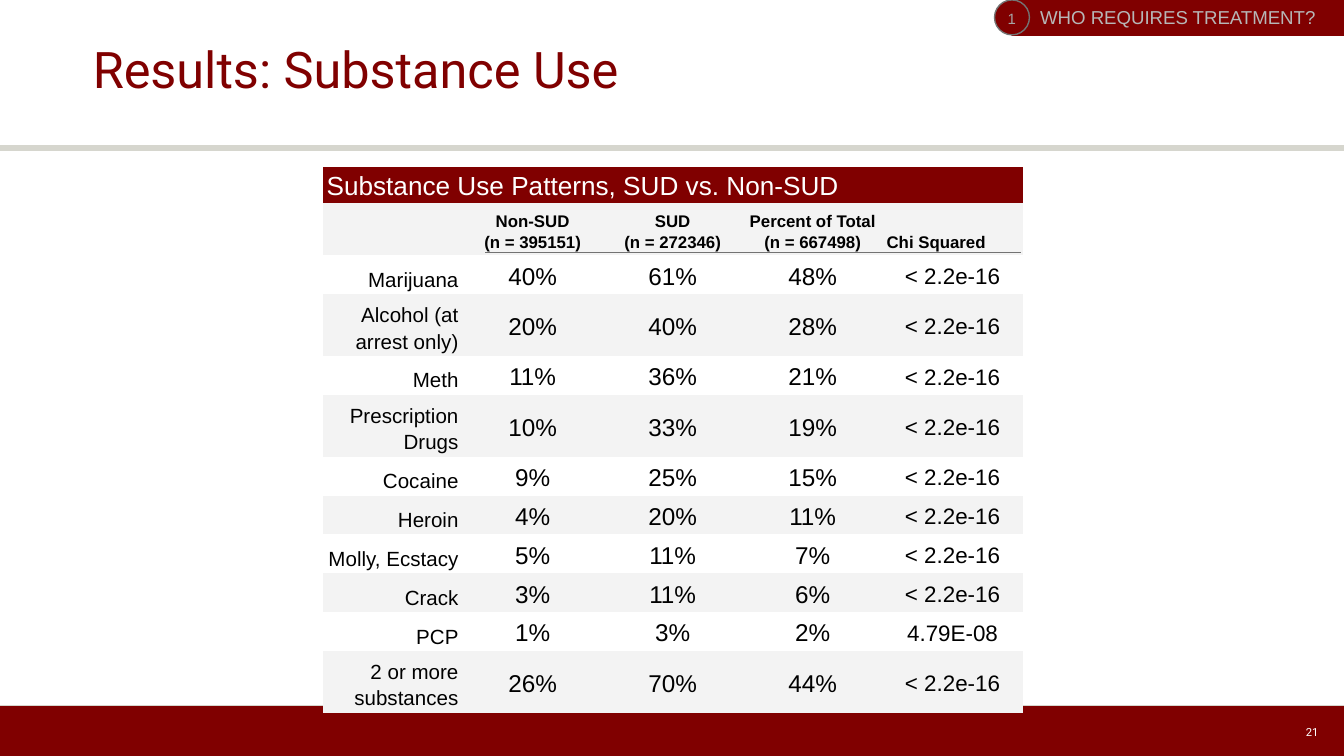
import pptx
import pptx.util
import pptx.dml.color
import pptx.enum.shapes
import pptx.enum.text
import pptx.oxml.ns
from lxml import etree

Inches = pptx.util.Inches
Pt = pptx.util.Pt
RGBColor = pptx.dml.color.RGBColor
Align = pptx.enum.text.PP_ALIGN
Anchor = pptx.enum.text.MSO_ANCHOR
Shape = pptx.enum.shapes.MSO_SHAPE

MAROON = RGBColor(0x80, 0x00, 0x00)
STONE = RGBColor(0xD6, 0xD6, 0xCE)
GRAY = RGBColor(0x73, 0x73, 0x73)
BAND = RGBColor(0xF3, 0xF3, 0xF3)
LABEL = RGBColor(0xB7, 0xB7, 0xB7)
NUMBER = RGBColor(0xA6, 0xA6, 0xA6)
WHITE = RGBColor(0xFF, 0xFF, 0xFF)
BLACK = RGBColor(0x00, 0x00, 0x00)

TITLE = "Results: Substance Use"
SECTION = ("1", "WHO REQUIRES TREATMENT?")
PAGE_NUMBER = "21"
TABLE_TITLE = "Substance Use Patterns, SUD vs. Non-SUD"
HEADERS = ["", "Non-SUD\n(n = 395151)", "SUD\n(n = 272346)",
           "Percent of Total\n(n = 667498)", "Chi Squared"]
ROWS = [
    ("Marijuana", "40%", "61%", "48%", "< 2.2e-16"),
    ("Alcohol (at arrest only)", "20%", "40%", "28%", "< 2.2e-16"),
    ("Meth", "11%", "36%", "21%", "< 2.2e-16"),
    ("Prescription Drugs", "10%", "33%", "19%", "< 2.2e-16"),
    ("Cocaine", "9%", "25%", "15%", "< 2.2e-16"),
    ("Heroin", "4%", "20%", "11%", "< 2.2e-16"),
    ("Molly, Ecstacy", "5%", "11%", "7%", "< 2.2e-16"),
    ("Crack", "3%", "11%", "6%", "< 2.2e-16"),
    ("PCP", "1%", "3%", "2%", "4.79E-08"),
    ("2 or more substances", "26%", "70%", "44%", "< 2.2e-16"),
]
SLIDE_WIDTH = 10
SLIDE_HEIGHT = SLIDE_WIDTH * 9 / 16
FOOTER_TOP = 5.25
TABLE_LEFT, TABLE_TOP, TABLE_WIDTH = 2.4, 1.24, 5.21
ROW_HEIGHT, HEADER_HEIGHT, TWO_LINE_HEIGHT = 0.22, 0.34, 0.38
ONE_LINE_LIMIT = 14  # characters that fit on one line of the first column
NO_TABLE_STYLE = "{2D5ABB26-0587-4C30-8999-92F81FD0307C}"


def write(frame, text, size, color, font="Arial", bold=False,
          align=Align.LEFT, spacing=None):
    frame.text = text
    for para in frame.paragraphs:
        para.alignment = align
        if spacing:
            para.line_spacing = spacing
        for span in para.runs:
            span.font.size = Pt(size)
            span.font.name = font
            span.font.bold = bold
            span.font.color.rgb = color


def set_frame(frame, insets, anchor=Anchor.MIDDLE):
    """Insets are left, top, right, bottom in inches."""
    frame.word_wrap = True
    frame.vertical_anchor = anchor
    (frame.margin_left, frame.margin_top,
     frame.margin_right, frame.margin_bottom) = map(Inches, insets)


def add_line(page, left, right, y, color, width):
    line = page.shapes.add_connector(
        pptx.enum.shapes.MSO_CONNECTOR.STRAIGHT,
        Inches(left), Inches(y), Inches(right), Inches(y))
    line.line.color.rgb = color
    line.line.width = Pt(width)
    etree.SubElement(line._element.spPr, pptx.oxml.ns.qn("a:effectLst"))


def add_block(page, kind, box, outline=None):
    block = page.shapes.add_shape(kind, *map(Inches, box))
    block.shadow.inherit = False
    block.fill.solid()
    block.fill.fore_color.rgb = MAROON
    if outline is None:
        block.line.fill.background()
    else:
        block.line.color.rgb = outline
        block.line.width = Pt(0.75)
    return block


def fill_cell(cell, text, fill, size, color=BLACK, anchor=Anchor.MIDDLE, **style):
    cell.fill.solid()
    cell.fill.fore_color.rgb = fill
    cell.vertical_anchor = anchor
    cell.margin_left = cell.margin_right = Inches(0.03)
    cell.margin_top = cell.margin_bottom = Inches(0.02)
    if text:
        write(cell.text_frame, text, size, color, **style)


def add_results_table(page):
    heights = [ROW_HEIGHT, HEADER_HEIGHT] + [
        TWO_LINE_HEIGHT if len(row[0]) > ONE_LINE_LIMIT else ROW_HEIGHT
        for row in ROWS]
    frame = page.shapes.add_table(
        len(heights), len(HEADERS), Inches(TABLE_LEFT), Inches(TABLE_TOP),
        Inches(TABLE_WIDTH), Inches(sum(heights)))
    table = frame.table
    table.first_row = table.horz_banding = False
    table._tbl.tblPr.find(pptx.oxml.ns.qn("a:tableStyleId")).text = NO_TABLE_STYLE
    for row, height in zip(table.rows, heights):
        row.height = Inches(height)

    last = len(HEADERS) - 1
    table.cell(0, 0).merge(table.cell(0, last))
    fill_cell(table.cell(0, 0), TABLE_TITLE, MAROON, 14, WHITE, Anchor.BOTTOM)

    for column, text in enumerate(HEADERS):
        fill_cell(table.cell(1, column), text, BAND, 9, anchor=Anchor.BOTTOM,
                  bold=True, spacing=1.15,
                  align=Align.LEFT if column == last else Align.CENTER)

    for index, (substance, *values) in enumerate(ROWS):
        fill = BAND if index % 2 else WHITE
        fill_cell(table.cell(index + 2, 0), substance, fill, 11,
                  anchor=Anchor.BOTTOM, align=Align.RIGHT, spacing=1.15)
        for column, value in enumerate(values, 1):
            fill_cell(table.cell(index + 2, column), value, fill,
                      12 if column == last else 13,
                      align=Align.CENTER, spacing=1.15)


def main():
    deck = pptx.Presentation()
    deck.slide_width, deck.slide_height = Inches(SLIDE_WIDTH), Inches(SLIDE_HEIGHT)
    page = deck.slides.add_slide(deck.slide_layouts[5])

    add_line(page, 0, SLIDE_WIDTH, 1.1, STONE, 3)
    add_block(page, Shape.RECTANGLE,
              (0, FOOTER_TOP, SLIDE_WIDTH, SLIDE_HEIGHT - FOOTER_TOP))
    add_line(page, 0, SLIDE_WIDTH, FOOTER_TOP, STONE, 0.75)

    title = page.shapes.title
    title.left, title.top, title.width, title.height = map(
        Inches, (0.69, 0, 8.62, 1.08))
    set_frame(title.text_frame, (0, 0.04, 0, 0.04))
    write(title.text_frame, TITLE, 27, MAROON, font="Roboto", spacing=0.9)

    number = page.shapes.add_textbox(*map(Inches, (7.06, 5.3, 2.82, 0.3)))
    set_frame(number.text_frame, (0.07, 0.04, 0.07, 0.04))
    write(number.text_frame, PAGE_NUMBER, 6, WHITE, font="Roboto", align=Align.RIGHT)

    add_results_table(page)
    add_line(page, 3.61, 7.6, 1.88, GRAY, 0.75)

    tab = add_block(page, Shape.RECTANGLE, (7.53, 0, 2.47, 0.26), MAROON)
    set_frame(tab.text_frame, (0.21, 0.1, 0.1, 0.1))
    write(tab.text_frame, SECTION[1], 10, LABEL)
    add_block(page, Shape.OVAL, (7.4, 0, 0.26, 0.26), GRAY)
    badge = page.shapes.add_textbox(*map(Inches, (7.4, 0.02, 0.27, 0.24)))
    set_frame(badge.text_frame, (0.1, 0.05, 0.1, 0.05), Anchor.TOP)
    write(badge.text_frame, SECTION[0], 8, NUMBER)

    deck.save("out.pptx")


if __name__ == "__main__":
    main()
